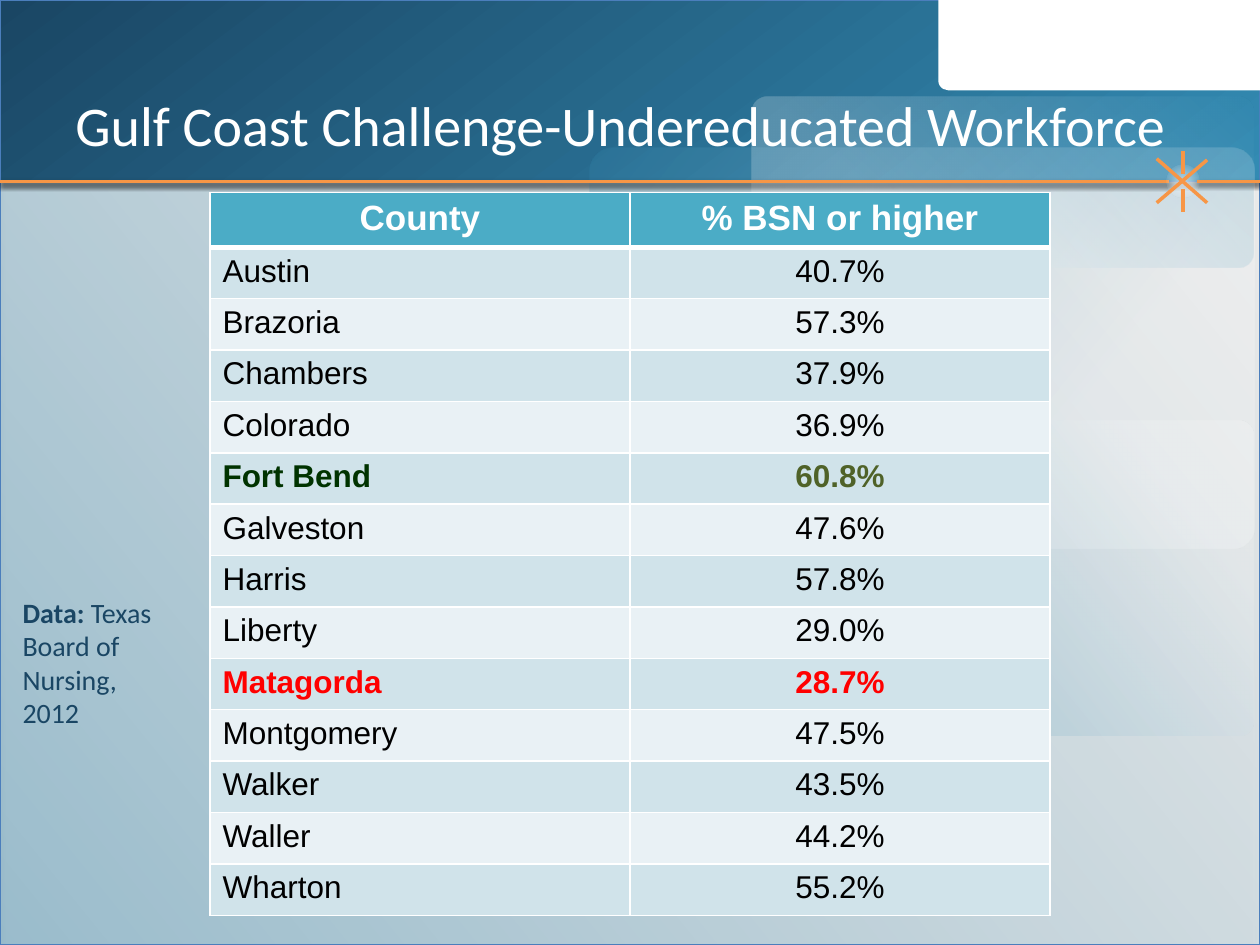
from pptx import Presentation
from pptx.dml.color import RGBColor
from pptx.enum.shapes import MSO_CONNECTOR, MSO_SHAPE
from pptx.enum.text import MSO_ANCHOR, PP_ALIGN
from pptx.oxml import parse_xml
from pptx.oxml.ns import nsdecls, qn
from pptx.util import Pt

# Content
TITLE = "Gulf Coast Challenge-Undereducated Workforce"
SOURCE_LINES = [
    [("Data: ", True), ("Texas", False)],
    [("Board of", False)],
    [("Nursing,", False)],
    [("2012", False)],
]
HEADINGS = ("County", "% BSN or higher")
COUNTIES = [
    ("Austin", "40.7%"), ("Brazoria", "57.3%"), ("Chambers", "37.9%"),
    ("Colorado", "36.9%"), ("Fort Bend", "60.8%"), ("Galveston", "47.6%"),
    ("Harris", "57.8%"), ("Liberty", "29.0%"), ("Matagorda", "28.7%"),
    ("Montgomery", "47.5%"), ("Walker", "43.5%"), ("Waller", "44.2%"),
    ("Wharton", "55.2%"),
]
HIGHLIGHTS = {"Fort Bend": ("003300", "4F6228"), "Matagorda": ("FF0000", "FF0000")}

# Colours
WHITE, NAVY, BLUE, ORANGE, EDGE = "FFFFFF", "1A4664", "338BB3", "F79646", "4B7EBC"
HEADING_FILL, BANDS = "4BACC6", ("D0E3EA", "E9F1F5")

# Backdrop: left, top, width, height, stops (position, colour, opacity), angle
WIDTH, HEIGHT, HORIZON = 720, 540, 103.7
BANNERS = [
    (0, HORIZON, WIDTH, HEIGHT - HORIZON, [(0, BLUE, 39), (100, WHITE, 39)], 321),
    (0, 0, WIDTH, HORIZON, [(0, NAVY, 100), (100, BLUE, 100)], 53),
]
PANELS = [  # the same, with corner radius last
    (337, 84.2, 380, 229, [(29, WHITE, 22), (100, BLUE, 22)], 219, 0.058),
    (429.8, 55.4, 286.6, 97.2, [(29, WHITE, 22), (100, BLUE, 22)], 312, 0.092),
    (533.5, 240.5, 182.9, 180, [(23, WHITE, 17), (100, BLUE, 17)], 143, 0.048),
]
GLOW_STOPS = [(2, WHITE, 54), (81, WHITE, 0)]
STAR_X = 676.1
SPOKES = [
    (STAR_X, 86.4, STAR_X, 99.4), (689.8, 91.4, 661, 115.9),
    (661, 90.7, 689.8, 115.9), (STAR_X, 121, STAR_X, 108),
]


def rgb(value):
    return RGBColor.from_string(value)


def add_shadow(part, opacity, distance):
    effects = part._element.spPr.find(qn("a:effectLst"))
    effects.append(parse_xml(
        f'<a:outerShdw {nsdecls("a")} blurRad="{Pt(3.1)}" dist="{Pt(distance)}" dir="5400000" '
        f'rotWithShape="0"><a:srgbClr val="000000"><a:alpha val="{opacity * 1000}"/>'
        '</a:srgbClr></a:outerShdw>'))


def add_box(preset, left, top, width, height):
    box = slide.shapes.add_shape(preset, Pt(left), Pt(top), Pt(width), Pt(height))
    box.shadow.inherit = False
    box.line.fill.background()
    return box


def fill_gradient(box, stops, angle=None):
    """Shade along an angle, or outwards from the centre if there is none."""
    stop_xml = "".join(
        f'<a:gs pos="{position * 1000}"><a:srgbClr val="{colour}">'
        f'<a:alpha val="{opacity * 1000}"/></a:srgbClr></a:gs>'
        for position, colour, opacity in stops)
    if angle is None:
        direction = ('<a:path path="circle"><a:fillToRect l="50000" t="50000" '
                     'r="50000" b="50000"/></a:path>')
    else:
        direction = f'<a:lin ang="{angle * 60000}" scaled="0"/>'
    box._element.spPr.find(qn("a:prstGeom")).addnext(parse_xml(
        f'<a:gradFill {nsdecls("a")} rotWithShape="1"><a:gsLst>{stop_xml}</a:gsLst>'
        f'{direction}</a:gradFill>'))


def add_line(x1, y1, x2, y2):
    line = slide.shapes.add_connector(MSO_CONNECTOR.STRAIGHT, Pt(x1), Pt(y1), Pt(x2), Pt(y2))
    line.line.color.rgb = rgb(ORANGE)
    line.line.width = Pt(2)
    line._element.spPr.append(parse_xml(f'<a:effectLst {nsdecls("a")}/>'))
    return line


def add_run(paragraph, text, font, size, colour, bold=False):
    run = paragraph.add_run()
    run.text = text
    run.font.name, run.font.size, run.font.bold = font, Pt(size), bold
    run.font.color.rgb = rgb(colour)


def add_text_frame(left, top, width, height):
    frame = slide.shapes.add_textbox(Pt(left), Pt(top), Pt(width), Pt(height)).text_frame
    frame.word_wrap = True
    frame.vertical_anchor = MSO_ANCHOR.TOP
    return frame


def set_borders(cell, top, bottom):
    properties = cell._tc.get_or_add_tcPr()
    for side, width in (("L", 1), ("R", 1), ("T", top), ("B", bottom)):
        properties.append(parse_xml(
            f'<a:ln{side} {nsdecls("a")} w="{Pt(width)}"><a:solidFill>'
            f'<a:srgbClr val="{WHITE}"/></a:solidFill></a:ln{side}>'))


presentation = Presentation()
presentation.slide_width, presentation.slide_height = Pt(WIDTH), Pt(HEIGHT)
slide = presentation.slides.add_slide(presentation.slide_layouts[6])

# Body and header backgrounds
for *frame, stops, angle in BANNERS:
    banner = add_box(MSO_SHAPE.RECTANGLE, *frame)
    fill_gradient(banner, stops, angle)
    banner.line.color.rgb = rgb(EDGE)
    banner.line.width = Pt(0.75)
    add_shadow(banner, 35, 1.8)

# Translucent rounded panels
for *frame, stops, angle, radius in PANELS:
    panel = add_box(MSO_SHAPE.ROUNDED_RECTANGLE, *frame)
    panel.adjustments[0] = radius
    fill_gradient(panel, stops, angle)

# Horizon line with the star
add_shadow(add_line(0, HORIZON, 668.2, HORIZON), 38, 1.6)
glow = add_box(MSO_SHAPE.OVAL, STAR_X - 9.4, HORIZON - 9.4, 18.8, 18.8)
fill_gradient(glow, GLOW_STOPS)
for spoke in SPOKES:
    add_line(*spoke)
add_shadow(add_line(684, HORIZON, WIDTH, HORIZON), 38, 1.6)

# White corner
corner = add_box(MSO_SHAPE.ROUNDED_RECTANGLE, 536.2, -9.6, 198.7, 61.2)
corner.adjustments[0] = 0.092
corner.fill.solid()
corner.fill.fore_color.rgb = rgb(WHITE)

# Title
title = add_text_frame(36, 48.2, 648, 50)
add_run(title.paragraphs[0], TITLE, "Calibri", 32, WHITE)

# Data source
source = add_text_frame(5.8, 336.5, 108, 86)
for index, pieces in enumerate(SOURCE_LINES):
    paragraph = source.add_paragraph() if index else source.paragraphs[0]
    for text, bold in pieces:
        add_run(paragraph, text, "Calibri", 16, NAVY, bold)

# County table
rows = [HEADINGS, *COUNTIES]
ROW_HEIGHT = 29.37
counties = slide.shapes.add_table(
    len(rows), len(HEADINGS), Pt(120), Pt(110), Pt(480), Pt(ROW_HEIGHT * len(rows))).table
for row_index, row in enumerate(rows):
    counties.rows[row_index].height = Pt(ROW_HEIGHT)
    heading = row_index == 0
    highlight = HIGHLIGHTS.get(row[0])
    for column, text in enumerate(row):
        cell = counties.cell(row_index, column)
        set_borders(cell, 3 if row_index == 1 else 1, 3 if heading else 1)
        cell.fill.solid()
        cell.fill.fore_color.rgb = rgb(HEADING_FILL if heading else BANDS[(row_index - 1) % 2])
        paragraph = cell.text_frame.paragraphs[0]
        paragraph.alignment = PP_ALIGN.CENTER if heading or column else PP_ALIGN.LEFT
        colour = WHITE if heading else highlight[column] if highlight else "000000"
        add_run(paragraph, text, "Arial", 20 if heading else 18, colour,
                heading or highlight is not None)

presentation.save("out.pptx")
